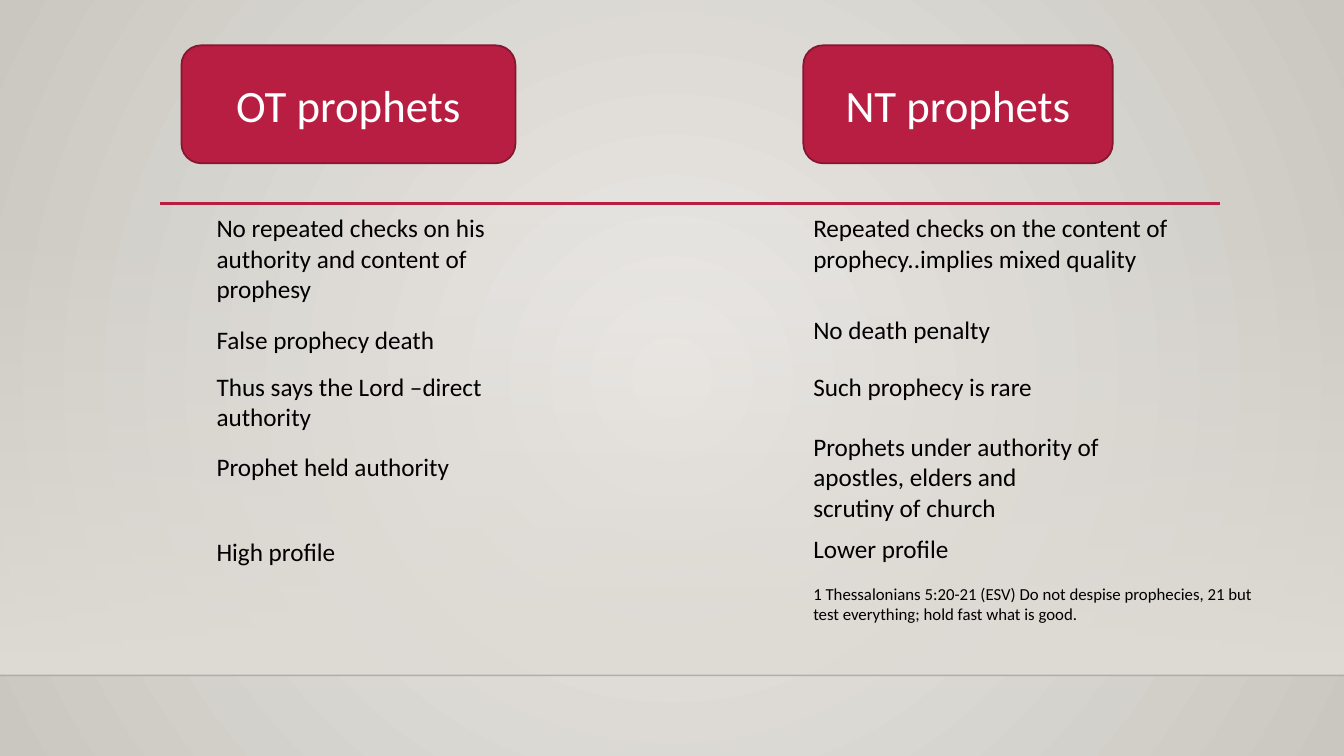
from lxml import etree
from pptx import Presentation
from pptx.dml.color import RGBColor
from pptx.enum.shapes import MSO_CONNECTOR, MSO_SHAPE
from pptx.enum.text import MSO_ANCHOR, MSO_AUTO_SIZE, PP_ALIGN
from pptx.oxml.ns import qn
from pptx.util import Pt

CRIMSON = RGBColor(0xB7, 0x1E, 0x42)
DARK_CRIMSON = RGBColor(0x87, 0x16, 0x31)
WHITE = RGBColor(0xFF, 0xFF, 0xFF)
BLACK = RGBColor(0x00, 0x00, 0x00)
SHELF_EDGE = RGBColor(0x00, 0x00, 0x01)
SHELF = RGBColor(0xDF, 0xDB, 0xD5)
GLOW = RGBColor(0xEC, 0xEA, 0xE7)
RIM = RGBColor(0xCA, 0xC7, 0xC1)
FONT = "Calibri"
SLIDE_WIDTH, SLIDE_HEIGHT = 960, 540
HEADING_TOP, HEADING_HEIGHT = 32.4, 84.24

OT_POINTS = [
    ("No repeated checks on his authority and content of prophesy", 148.32, 221, 72.7, 18),
    ("False prophecy death", 228.24, 221, 29, 18),
    ("Thus says the Lord –direct authority", 261.36, 221, 51, 18),
    ("Prophet held authority", 318.96, 221, 29, 18),
    ("High profile", 379.44, 221, 29, 18),
]
NT_POINTS = [
    ("Repeated checks on the content of prophecy..implies mixed quality", 148.32, 276.5, 51, 18),
    ("No death penalty", 221.04, 319.7, 29, 18),
    ("Such prophecy is rare", 261.36, 221, 29, 18),
    ("Prophets under authority of apostles, elders and scrutiny of church", 304.56, 221, 72.7, 18),
    ("Lower profile", 377.28, 221, 29, 18),
    ("1 Thessalonians 5:20-21 (ESV) Do not despise prophecies, 21 but test everything; "
     "hold fast what is good.", 413.28, 336.2, 36, 12),
]


def set_gradient(fill, colors):
    fill.gradient()
    for stop, color in zip(fill.gradient_stops, colors):
        stop.color.rgb = color


def set_alpha(color_element, percent):
    etree.SubElement(color_element, qn("a:alpha"), val=str(percent * 1000))


def add_rule(slide, left, top, width, color, weight):
    rule = slide.shapes.add_connector(
        MSO_CONNECTOR.STRAIGHT, Pt(left), Pt(top), Pt(left + width), Pt(top))
    rule.line.color.rgb = color
    rule.line.width = Pt(weight)
    etree.SubElement(rule._element.spPr, qn("a:effectLst"))
    return rule


def add_backdrop(slide, width, height):
    set_gradient(slide.background.fill, (GLOW, RIM))
    gradient = slide._element.find(".//" + qn("p:bgPr")).find(qn("a:gradFill"))
    linear = gradient.find(qn("a:lin"))
    radial = etree.Element(qn("a:path"), path="circle")
    etree.SubElement(radial, qn("a:fillToRect"), l="50000", t="50000", r="50000", b="50000")
    gradient.replace(linear, radial)

    shelf_top, shelf_bottom = 159.12, 482.4
    shelf = slide.shapes.add_shape(
        MSO_SHAPE.RECTANGLE, 0, Pt(shelf_top), Pt(width), Pt(shelf_bottom - shelf_top))
    shelf.shadow.inherit = False
    shelf.line.fill.background()
    set_gradient(shelf.fill, (SHELF, SHELF))
    shelf.fill.gradient_angle = 270
    set_alpha(shelf._element.spPr.find(".//" + qn("a:srgbClr")), 0)

    edge = add_rule(slide, 0, shelf_bottom, width, SHELF_EDGE, 1)
    set_alpha(edge._element.spPr.find(".//" + qn("a:srgbClr")), 20)


def format_text(text_frame, text, size, color):
    text_frame.text = text
    text_frame.word_wrap = True
    font = text_frame.paragraphs[0].runs[0].font
    font.name = FONT
    font.size = Pt(size)
    font.color.rgb = color


def add_heading(slide, text, left, top, width, height):
    heading = slide.shapes.add_shape(
        MSO_SHAPE.ROUNDED_RECTANGLE, Pt(left), Pt(top), Pt(width), Pt(height))
    heading.shadow.inherit = False
    heading.fill.solid()
    heading.fill.fore_color.rgb = CRIMSON
    heading.line.color.rgb = DARK_CRIMSON
    heading.line.width = Pt(1.25)
    format_text(heading.text_frame, text, 32, WHITE)
    heading.text_frame.vertical_anchor = MSO_ANCHOR.MIDDLE
    heading.text_frame.paragraphs[0].alignment = PP_ALIGN.CENTER


def add_points(slide, points, left):
    for text, top, width, height, size in points:
        box = slide.shapes.add_textbox(Pt(left), Pt(top), Pt(width), Pt(height))
        format_text(box.text_frame, text, size, BLACK)
        box.text_frame.auto_size = MSO_AUTO_SIZE.SHAPE_TO_FIT_TEXT


def main():
    presentation = Presentation()
    presentation.slide_width = Pt(SLIDE_WIDTH)
    presentation.slide_height = Pt(SLIDE_HEIGHT)
    slide = presentation.slides.add_slide(presentation.slide_layouts[6])
    add_backdrop(slide, SLIDE_WIDTH, SLIDE_HEIGHT)
    add_rule(slide, 114.48, 145.44, 756.72, CRIMSON, 2.5)
    add_heading(slide, "OT prophets", 129.6, HEADING_TOP, 238.6, HEADING_HEIGHT)
    add_heading(slide, "NT prophets", 573.84, HEADING_TOP, 221, HEADING_HEIGHT)
    add_points(slide, OT_POINTS, 147.6)
    add_points(slide, NT_POINTS, 573.84)
    presentation.save("out.pptx")


if __name__ == "__main__":
    main()
